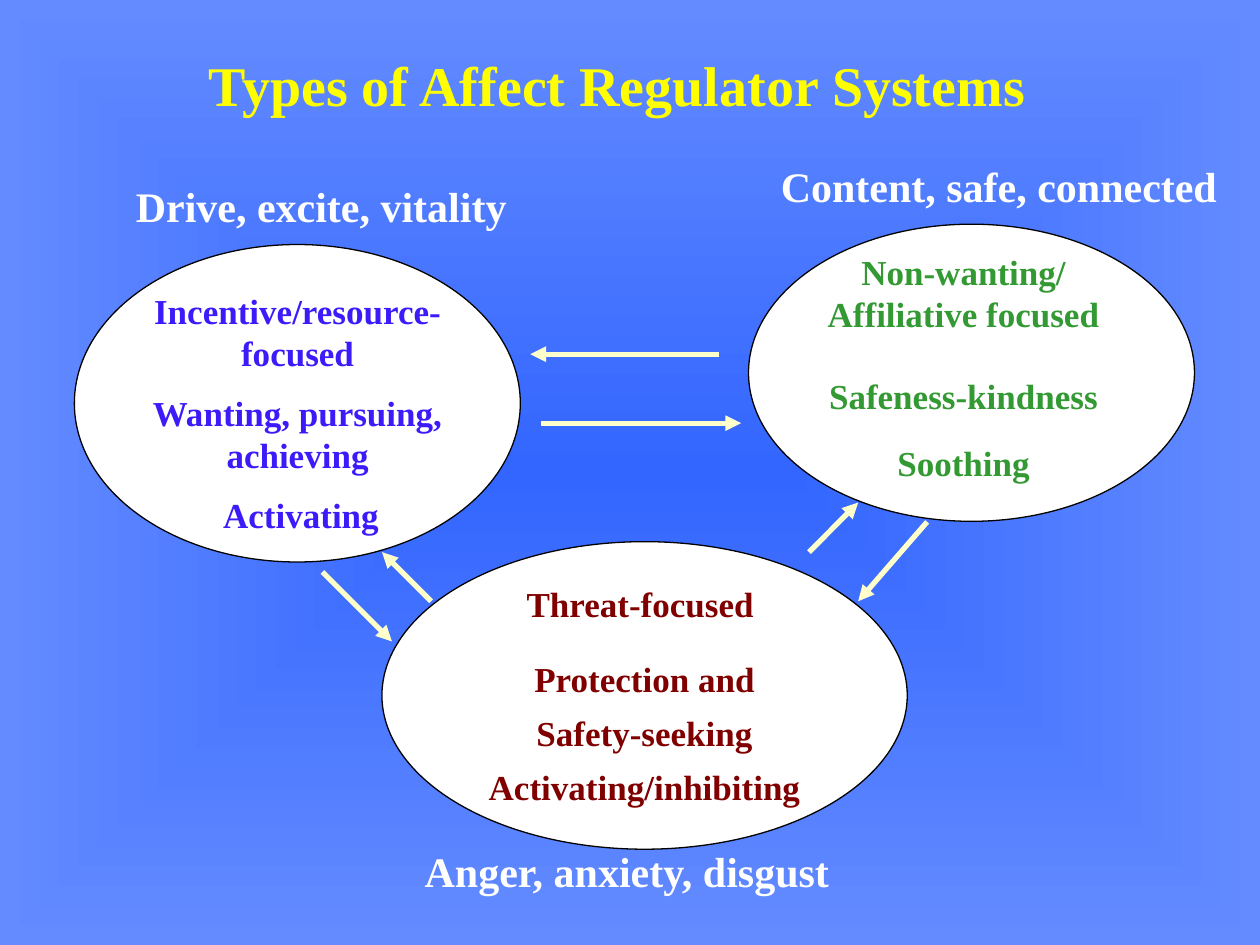
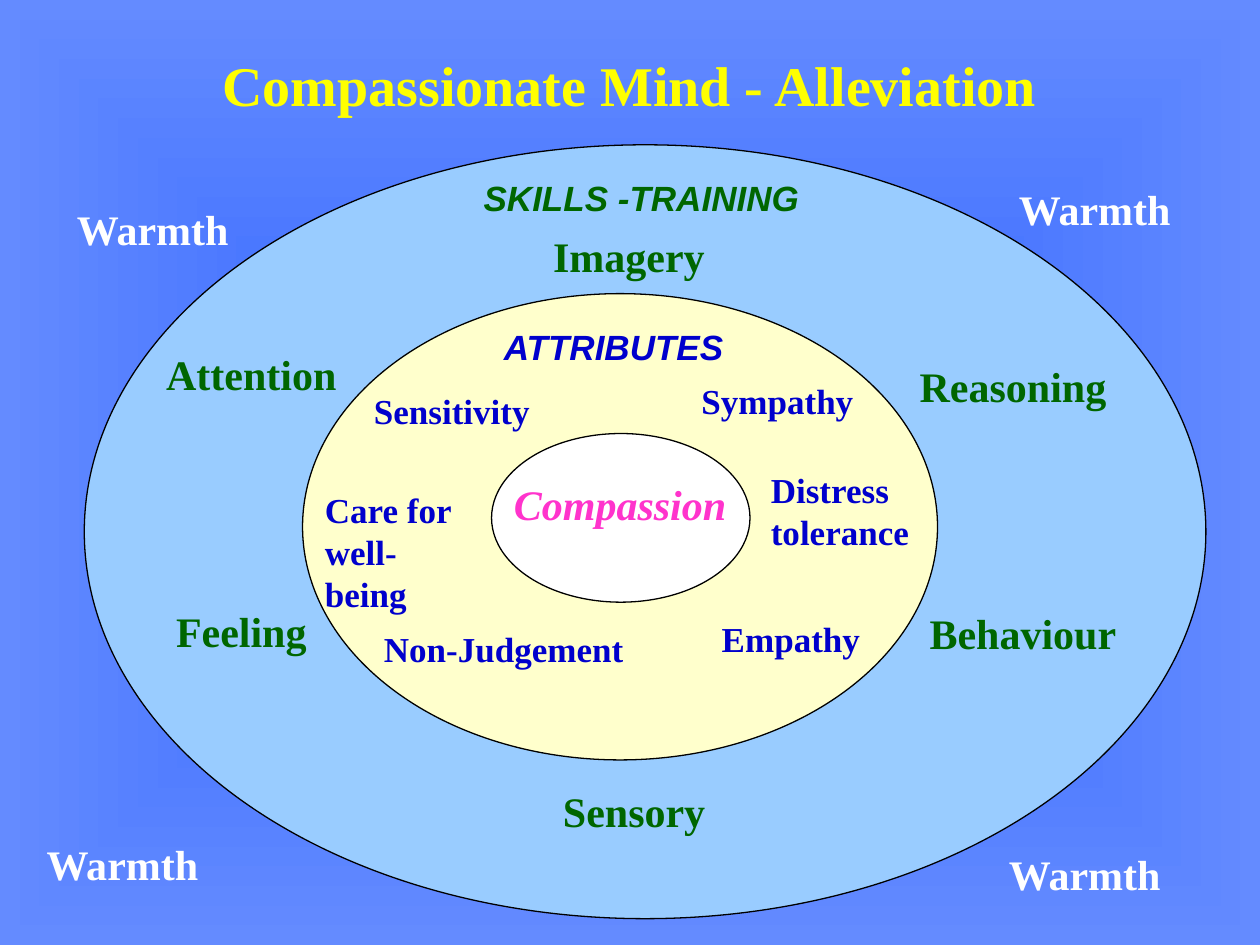
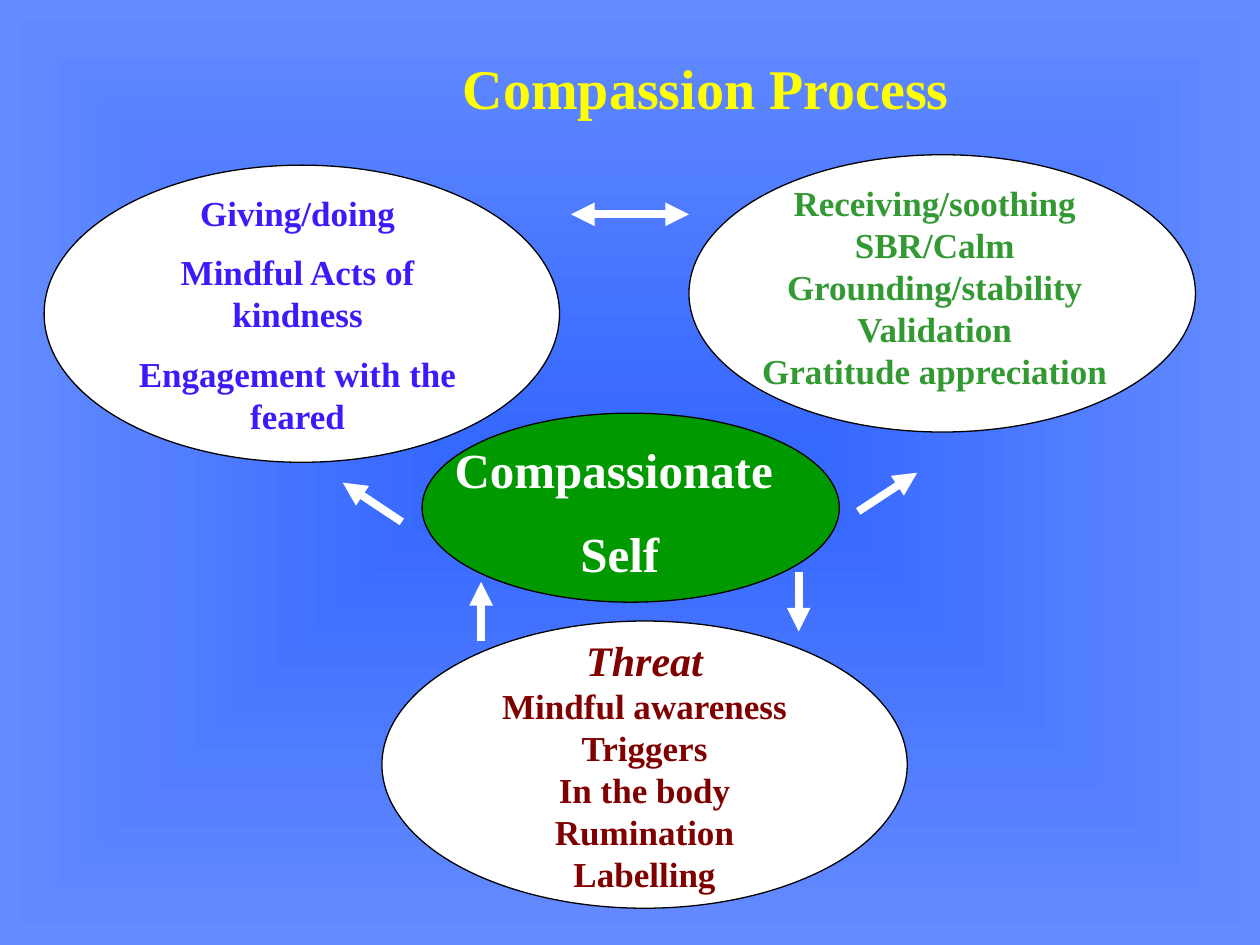
"""Build three slides on affect regulation and the compassionate mind."""
from lxml.etree import SubElement as Sub
from pptx import Presentation
from pptx.dml.color import RGBColor as Rgb
from pptx.enum.shapes import MSO_CONNECTOR as Link, MSO_SHAPE as Form
from pptx.enum.text import MSO_ANCHOR as Anchor, PP_ALIGN as Align
from pptx.oxml.ns import qn
from pptx.util import Cm, Pt

HUES = {
    "core": "3366FF", "edge": "648BFF", "title": "FFFF00", "white": "FFFFFF",
    "black": "000000", "drive": "3B1BF9", "soothe": "339933", "threat": "800000",
    "cream": "FFFFCC", "sky": "99CCFF", "skill": "006600", "trait": "0000CC",
    "pink": "FF33CC", "self": "009900",
}
HUES = {name: Rgb.from_string(code) for name, code in HUES.items()}


def box(page, *place):
    return page.shapes.add_textbox(*map(Cm, place))


def write(shape, text, hue="white", size=24, font="Times New Roman", italic=False,
          center=False, middle=False, wrap=True, gaps=(), lead=None):
    frame = shape.text_frame
    frame.word_wrap = wrap
    frame.vertical_anchor = Anchor.MIDDLE if middle else Anchor.TOP
    for num, line in enumerate(text.split("\n")):
        para = frame.add_paragraph() if num else frame.paragraphs[0]
        para.alignment = Align.CENTER if center else Align.LEFT
        if lead:
            para.line_spacing = lead
        if num and gaps:
            para.space_before = Pt(gaps[num - 1])
        run = para.add_run()
        run.text = line
        run.font.name, run.font.size = font, Pt(size)
        run.font.bold, run.font.italic = True, italic
        run.font.color.rgb = HUES[hue]


deck = Presentation()
deck.slide_width, deck.slide_height = Cm(25.4), Cm(19.05)

master = deck.slide_master
back = master.background.fill
back.gradient()
for stop, hue in zip(back.gradient_stops, ("core", "edge")):
    stop.color.rgb = HUES[hue]
grad = master.element.find(".//" + qn("p:bgPr") + "/" + qn("a:gradFill"))
grad.remove(grad.find(qn("a:lin")))
route = Sub(grad, qn("a:path"), {"path": "shape"})
Sub(route, qn("a:fillToRect"), {side: "50000" for side in "ltrb"})

titles = [
    ("Types of Affect Regulator Systems", (3.3, 1.07, 18.29, 1.27)),
    ("Compassionate Mind - Alleviation", (1.9, 0.53, 21.59, 2.34)),
    ("Compassion Process", (4.29, 1.12, 19.89, 1.27)),
]
pages = []
for title, place in titles:
    page = deck.slides.add_slide(deck.slide_layouts[6])
    write(box(page, *place), title, "title", 32, center=True, middle=True)
    pages.append(page)
types, mind, process = pages

ovals = [
    (types, "white", 1.5, 4.93, 8.99, 6.4),
    (types, "white", 15.09, 4.52, 8.99, 5.99),
    (types, "white", 7.7, 10.92, 10.59, 6.2),
    (mind, "sky", 1.7, 2.92, 22.61, 15.6),
    (mind, "cream", 6.1, 5.92, 12.8, 9.4),
    (mind, "white", 9.91, 8.74, 5.21, 3.4),
    (process, "white", 0.89, 3.33, 10.39, 5.99),
    (process, "white", 13.89, 3.12, 10.21, 5.59),
    (process, "self", 8.51, 8.33, 8.41, 3.81),
    (process, "white", 7.7, 12.52, 10.59, 5.79),
]
for page, hue, *place in ovals:
    oval = page.shapes.add_shape(Form.OVAL, *map(Cm, place))
    oval.shadow.inherit = False
    oval.fill.solid()
    oval.fill.fore_color.rgb = HUES[hue]
    oval.line.color.rgb = HUES["black"]
    oval.line.width = Pt(0.75)

arrows = [
    (types, "cream", 3, ["tailEnd"], [
        (10.9, 8.53, 14.94, 8.53), (14.5, 7.14, 10.69, 7.14),
        (6.5, 11.53, 7.9, 12.93), (8.69, 12.12, 7.7, 11.13),
        (18.69, 10.52, 17.3, 12.12), (16.31, 11.13, 17.3, 10.13)]),
    (process, "white", 4.5, ["tailEnd"], [
        (16.1, 11.53, 16.1, 12.73), (9.7, 12.93, 9.7, 11.73),
        (8.1, 10.52, 6.91, 9.73), (17.3, 10.31, 18.49, 9.53)]),
    (process, "white", 4.5, ["headEnd", "tailEnd"], [(11.51, 4.32, 13.89, 4.32)]),
]
for page, hue, width, tips, spans in arrows:
    for span in spans:
        arrow = page.shapes.add_connector(Link.STRAIGHT, *map(Cm, span))
        arrow.line.color.rgb = HUES[hue]
        arrow.line.width = Pt(width)
        props = arrow.element.spPr
        for tip in tips:
            Sub(props.find(qn("a:ln")), qn("a:" + tip), {"type": "triangle"})
        Sub(props, qn("a:effectLst"))

write(box(types, 2.29, 5.72, 7.42, 5.33),
      "Incentive/resource- focused\nWanting, pursuing, achieving\n Activating",
      "drive", 20, center=True, gaps=(10, 10))
write(box(types, 15.49, 4.93, 7.87, 5),
      "Non-wanting/\nAffiliative focused\nSafeness-kindness\nSoothing",
      "soothe", 20, center=True, gaps=(0, 23, 14))
write(types.shapes[3],
      "Threat-focused \nProtection and\nSafety-seeking\nActivating/inhibiting",
      "threat", 20, center=True, middle=True, wrap=False, gaps=(18.5, 7, 7))
moods = [
    ("Anger, anxiety, disgust", 8.31, 16.92, 9.4),
    ("Drive, excite, vitality", 2.49, 3.51, 8.2),
    ("Content, safe, connected", 15.49, 3.12, 9.91),
]
for text, left, top, width in moods:
    write(box(types, left, top, width, 1.27), text)

skills = [
    ("Imagery", 10.9, 4.52), ("Attention", 3.1, 6.91), ("Reasoning", 18.29, 7.14),
    ("Feeling", 3.3, 12.09), ("Behaviour", 18.49, 12.12), ("Sensory", 11.1, 15.72),
]
for text, left, top in skills:
    write(box(mind, left, top, 4.6, 1.27), text, "skill")
traits = [
    ("Care for well-being", 6.3, 9.73, 3.4), ("Sensitivity", 7.29, 7.72, 3.81),
    ("Sympathy", 13.89, 7.52, 4.19), ("Distress tolerance", 15.29, 9.32, 3.4),
    ("Empathy", 14.3, 12.32, 3.61), ("Non-Judgement", 7.49, 12.52, 5.4),
]
for text, left, top, width in traits:
    write(box(mind, left, top, width, 1.02), text, "trait", 20)
write(box(mind, 10.11, 9.53, 5.21, 1.27), "Compassion", "pink", italic=True)
heads = [
    ("ATTRIBUTES", "trait", 9.91, 6.53, 5.79),
    ("SKILLS -TRAINING", "skill", 9.5, 3.53, 7.59),
]
for text, hue, left, top, width in heads:
    write(box(mind, left, top, width, 0.94), text, hue, 20, "Arial", True, lead=0.9)
for left, top in [(1.3, 4.09), (0.69, 16.89), (20.29, 3.68), (20.09, 17.09)]:
    write(box(mind, left, top, 4, 1.17), "Warmth", lead=0.9)

write(box(process, 2.29, 3.73, 7.42, 6.6),
      "Giving/doing\nMindful Acts of kindness\nEngagement with the feared",
      "drive", 20, center=True, gaps=(10, 10))
write(box(process, 14.91, 3.53, 7.87, 4.5),
      "Receiving/soothing\nSBR/Calm\nGrounding/stability\nValidation\nGratitude appreciation",
      "soothe", 20, center=True)
threat = process.shapes[4]
write(threat, "Threat\nMindful awareness\nTriggers\nIn the body\nRumination\nLabelling",
      "threat", 20, center=True, middle=True, wrap=False)
head = threat.text_frame.paragraphs[0].runs[0].font
head.size, head.italic = Pt(24), True
write(box(process, 8.89, 8.74, 7.21, 3.23), "Compassionate \nSelf",
      size=28, center=True, gaps=(14,))

deck.save("out.pptx")
